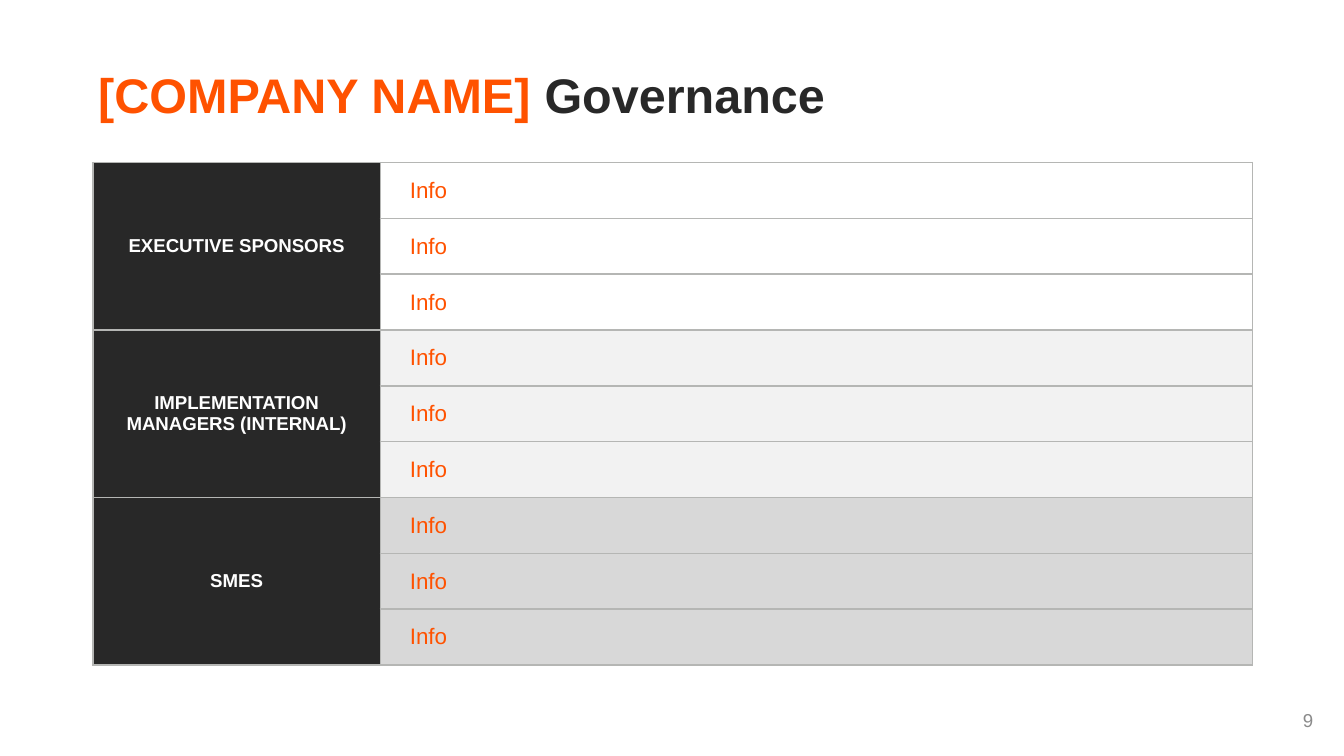
from dataclasses import dataclass

from lxml import etree
from pptx import Presentation
from pptx.dml.color import RGBColor as RGB
from pptx.enum.text import MSO_ANCHOR as Anchor, PP_ALIGN as Align
from pptx.oxml.ns import qn
from pptx.util import Inches, Pt


@dataclass(frozen=True)
class Theme:
    """Colours, font and type sizes of the slide."""
    font: str = "Arial"
    accent: str = "FF5200"
    dark: str = "282828"
    white: str = "FFFFFF"
    light: str = "F2F2F2"
    mid: str = "D8D8D8"
    border: str = "B5B6B4"
    muted: str = "8B8B8B"
    title_size: int = 26
    info_size: int = 12
    small_size: int = 10


THEME = Theme()
SLIDE_WIDTH = 10
INFO_ROWS = 3
GROUPS = [
    ("EXECUTIVE SPONSORS", THEME.white),
    ("IMPLEMENTATION MANAGERS (INTERNAL)", THEME.light),
    ("SMES", THEME.mid),
]


def style_run(r, size, color, bold=False):
    """Apply the theme font with a size, colour and weight to a run."""
    r.font.name = THEME.font
    r.font.size = Pt(size)
    r.font.bold = bold
    r.font.color.rgb = RGB.from_string(color)


def add_text(slide, box, runs, size, bold=False, align=Align.LEFT, anchor=Anchor.TOP):
    """Add a one-paragraph text box from (text, colour) runs and return the paragraph."""
    tf = slide.shapes.add_textbox(*map(Inches, box)).text_frame
    tf.word_wrap = True
    tf.vertical_anchor = anchor
    tf.margin_left = tf.margin_right = Inches(0.04)
    tf.margin_top = tf.margin_bottom = Inches(0.02)
    p = tf.paragraphs[0]
    p.alignment = align
    for text, color in runs:
        r = p.add_run()
        r.text = text
        style_run(r, size, color, bold)
    return p


def add_title(slide, box):
    """Add the two-colour slide title."""
    runs = [("[COMPANY NAME]", THEME.accent), (" Governance", THEME.dark)]
    p = add_text(slide, box, runs, THEME.title_size, bold=True)
    p.line_spacing = 0.9


def add_page_number(slide, box):
    """Add the page number at the right of its box."""
    add_text(slide, box, [("9", THEME.muted)], THEME.small_size,
             align=Align.RIGHT, anchor=Anchor.MIDDLE)


def set_borders(cell):
    """Draw a thin solid line on all four sides of a cell."""
    tc_pr = cell._tc.get_or_add_tcPr()
    for i, side in enumerate(("lnL", "lnR", "lnT", "lnB")):
        ln = etree.Element(qn(f"a:{side}"), w=str(Pt(1)))
        fill = etree.SubElement(ln, qn("a:solidFill"))
        etree.SubElement(fill, qn("a:srgbClr"), val=THEME.border)
        tc_pr.insert(i, ln)


def style_cell(cell, fill, side_margin):
    """Set the fill, borders, margins and anchor of a cell."""
    cell.fill.solid()
    cell.fill.fore_color.rgb = RGB.from_string(fill)
    cell.vertical_anchor = Anchor.MIDDLE
    cell.margin_left = cell.margin_right = Inches(side_margin)
    cell.margin_top = cell.margin_bottom = Inches(0.07)
    set_borders(cell)


def write_cell(cell, text, size, color, bold=False, align=Align.LEFT):
    """Write one formatted paragraph into a cell."""
    cell.text_frame.text = text
    p = cell.text_frame.paragraphs[0]
    p.alignment = align
    style_run(p.runs[0], size, color, bold)


def add_governance_table(slide, box, label_width):
    """Add the table with one merged label beside each group of info rows."""
    left, top, width, height = box
    row_count = len(GROUPS) * INFO_ROWS
    table = slide.shapes.add_table(row_count, 2, *map(Inches, box)).table
    table.first_row = table.horz_banding = False
    table.columns[0].width = Inches(label_width)
    table.columns[1].width = Inches(width - label_width)
    for row in table.rows:
        row.height = Inches(height / row_count)
    for g, (label, fill) in enumerate(GROUPS):
        first = g * INFO_ROWS
        for i in range(first, first + INFO_ROWS):
            style_cell(table.cell(i, 0), THEME.dark, 0.11)
            style_cell(table.cell(i, 1), fill, 0.22)
            write_cell(table.cell(i, 1), "Info", THEME.info_size, THEME.accent)
        label_cell = table.cell(first, 0)
        label_cell.merge(table.cell(first + INFO_ROWS - 1, 0))
        write_cell(label_cell, label, THEME.small_size, THEME.white, True, Align.CENTER)


def main():
    """Build the governance slide and save it."""
    prs = Presentation()
    prs.slide_width = Inches(SLIDE_WIDTH)
    prs.slide_height = Inches(SLIDE_WIDTH * 9 / 16)
    slide = prs.slides.add_slide(prs.slide_layouts[6])
    add_governance_table(slide, (0.69, 1.21, 8.63, 3.74), label_width=2.14)
    add_title(slide, (0.69, 0.51, 8.62, 0.46))
    add_page_number(slide, (7.56, 5.21, 2.25, 0.3))
    prs.save("out.pptx")


if __name__ == "__main__":
    main()
